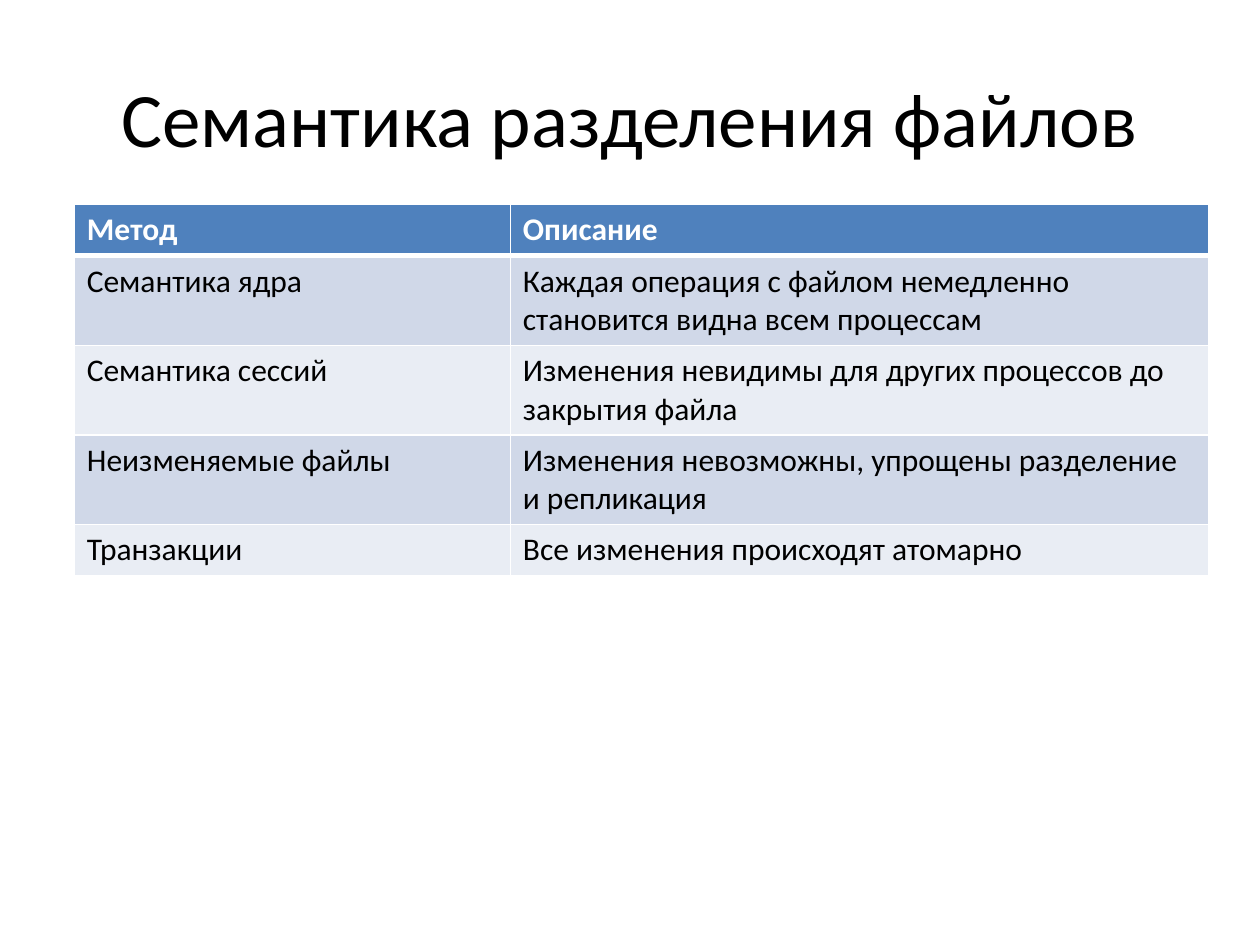
from dataclasses import dataclass

from lxml.etree import SubElement
from pptx import Presentation
from pptx.dml.color import RGBColor as RGB
from pptx.enum.text import MSO_ANCHOR, PP_ALIGN
from pptx.oxml.ns import qn
from pptx.util import Inches, Pt


@dataclass(frozen=True)
class Theme:
    font: str = "Calibri"
    title_size: int = 44
    table_size: int = 18
    text: str = "000000"
    header_text: str = "FFFFFF"
    header_fill: str = "4F81BD"
    bands: tuple = ("D0D8E8", "E9EDF4")
    border: str = "FFFFFF"
    border_width: int = 1
    header_rule: int = 3


THEME = Theme()
TITLE = "Семантика разделения файлов"
METHODS = [
    ("Метод", "Описание"),
    ("Семантика ядра", "Каждая операция с файлом немедленно становится видна всем процессам"),
    ("Семантика сессий", "Изменения невидимы для других процессов до закрытия файла"),
    ("Неизменяемые файлы", "Изменения невозможны, упрощены разделение и репликация"),
    ("Транзакции", "Все изменения происходят атомарно"),
]
COLUMN_WIDTHS = (3.46, 5.54)
ROW_HEIGHT = 0.41


def style_font(font, size, color, bold=False):
    font.name = THEME.font
    font.size = Pt(size)
    font.bold = bold
    font.color.rgb = RGB.from_string(color)


def add_title(slide, left, top, width, height):
    sp = slide.shapes.title
    sp.left, sp.top, sp.width, sp.height = map(Inches, (left, top, width, height))
    tf = sp.text_frame
    tf.text = TITLE
    tf.vertical_anchor = MSO_ANCHOR.MIDDLE
    p = tf.paragraphs[0]
    p.alignment = PP_ALIGN.CENTER
    style_font(p.font, THEME.title_size, THEME.text)


def set_borders(cell, top, bottom):
    """Draw the cell's edges; top and bottom are widths in points."""
    side = THEME.border_width
    tc_pr = cell._tc.get_or_add_tcPr()
    edges = (("a:lnL", side), ("a:lnR", side), ("a:lnT", top), ("a:lnB", bottom))
    for i, (tag, width) in enumerate(edges):
        ln = SubElement(tc_pr, qn(tag), w=str(Pt(width)))
        fill = SubElement(ln, qn("a:solidFill"))
        SubElement(fill, qn("a:srgbClr"), val=THEME.border)
        tc_pr.insert(i, ln)


def add_methods_table(slide, left, top):
    width, height = sum(COLUMN_WIDTHS), ROW_HEIGHT * len(METHODS)
    table = slide.shapes.add_table(
        len(METHODS), len(COLUMN_WIDTHS), *map(Inches, (left, top, width, height))
    ).table
    for column, column_width in zip(table.columns, COLUMN_WIDTHS):
        column.width = Inches(column_width)
    for i, texts in enumerate(METHODS):
        header = i == 0
        fill = THEME.header_fill if header else THEME.bands[(i - 1) % 2]
        color = THEME.header_text if header else THEME.text
        above = THEME.header_rule if i == 1 else THEME.border_width
        below = THEME.header_rule if header else THEME.border_width
        for j, text in enumerate(texts):
            cell = table.cell(i, j)
            cell.text = text
            cell.fill.solid()
            cell.fill.fore_color.rgb = RGB.from_string(fill)
            set_borders(cell, above, below)
            style_font(cell.text_frame.paragraphs[0].font, THEME.table_size, color, header)


def main():
    prs = Presentation()
    prs.slide_width, prs.slide_height = Inches(10), Inches(7.5)
    title_only = prs.slide_layouts[5]
    slide = prs.slides.add_slide(title_only)
    add_title(slide, 0.5, 0.3, 9, 1.25)
    add_methods_table(slide, 0.59, 1.62)
    prs.save("out.pptx")


if __name__ == "__main__":
    main()
